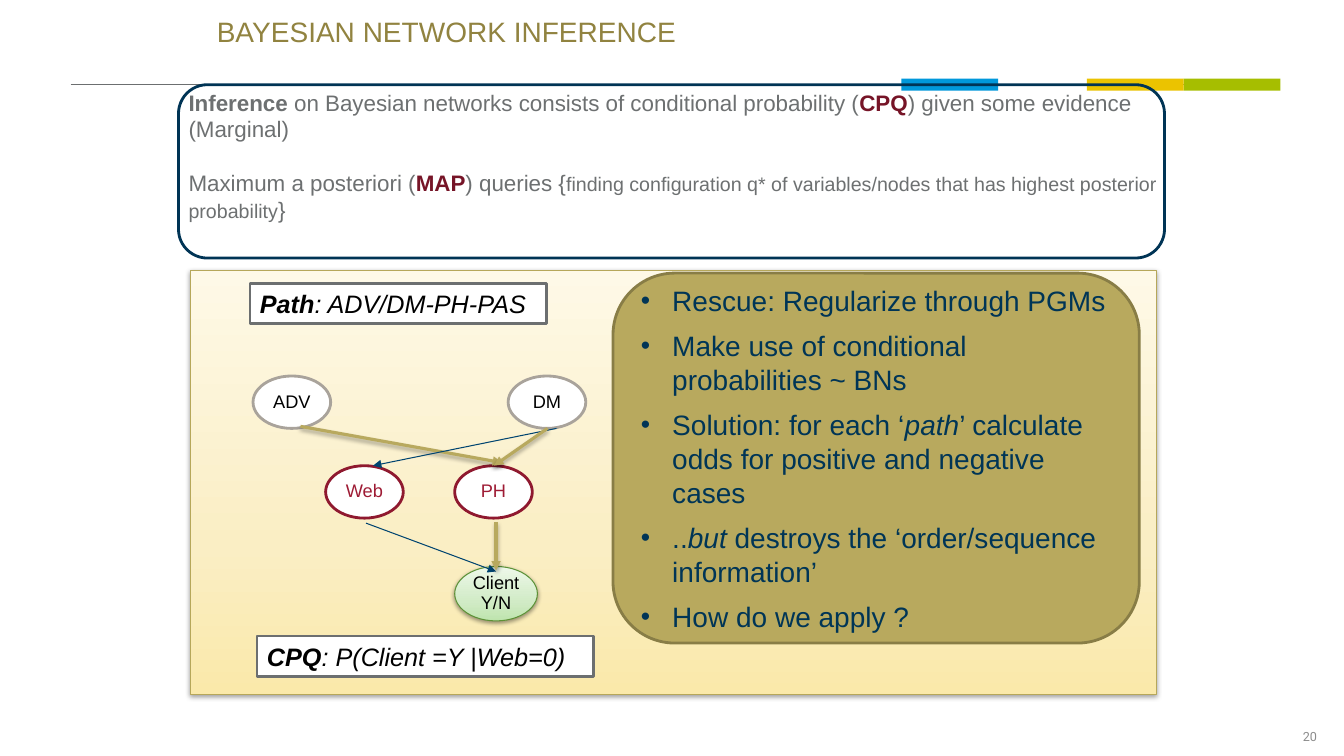
from dataclasses import dataclass

from lxml import etree
from pptx import Presentation
from pptx.dml.color import RGBColor
from pptx.enum.shapes import MSO_CONNECTOR as Connector, MSO_SHAPE as Shape
from pptx.enum.text import MSO_ANCHOR as Anchor, PP_ALIGN as Align
from pptx.oxml import parse_xml
from pptx.oxml.ns import nsdecls, qn
from pptx.util import Inches, Pt


@dataclass(frozen=True)
class Theme:
    font: str = "Arial"
    number_font: str = "Roboto"
    black: str = "000000"
    white: str = "FFFFFF"
    grey: str = "6C6F70"
    body: str = "6D7071"
    number: str = "8C8C8C"
    title: str = "918340"
    accent: str = "761427"
    navy: str = "003455"
    bullet_text: str = "003556"
    thin_arrow: str = "004470"
    gold: str = "B8A95E"
    gold_edge: str = "887D46"
    panel_edge: str = "B6A75A"
    cause_edge: str = "A9A39B"
    event_edge: str = "8F192F"
    event_text: str = "9E1B34"
    client_edge: str = "5D9136"
    panel_gradient: tuple = ((0, "FAE9AA"), (35, "FAEEC4"), (100, "FEF9E7"))
    client_gradient: tuple = ((0, "BEE4AD"), (35, "D1EBC6"), (100, "EDF8E9"))
    number_size: int = 9
    node_size: int = 13
    detail_size: int = 14
    body_size: int = 16
    label_size: int = 18
    large_size: int = 20


THEME = Theme()


def rgb(color):
    return RGBColor.from_string(color)


def add_runs(paragraph, runs, size, color):
    """Each run is its text and a dict of what differs from the paragraph."""
    for text, style in runs:
        run = paragraph.add_run()
        run.text = text
        font = run.font
        font.name = style.get("font", THEME.font)
        font.size = Pt(style.get("size", size))
        font.color.rgb = rgb(style.get("color", color))
        font.bold = style.get("bold", False)
        font.italic = style.get("italic", False)


def set_frame(shape, anchor=Anchor.TOP, inset=None):
    frame = shape.text_frame
    frame.word_wrap = True
    frame.vertical_anchor = anchor
    if inset is not None:
        frame.margin_left = frame.margin_right = Inches(inset)
        frame.margin_top = frame.margin_bottom = Inches(inset)
    return frame


def add_text(slide, box, paragraphs, size, color, inset=None, anchor=Anchor.TOP,
             align=Align.LEFT, before=0):
    shape = slide.shapes.add_textbox(*map(Inches, box))
    frame = set_frame(shape, anchor, inset)
    for index, runs in enumerate(paragraphs):
        paragraph = frame.add_paragraph() if index else frame.paragraphs[0]
        paragraph.alignment = align
        paragraph.space_before = Pt(before if index else 0)
        add_runs(paragraph, runs, size, color)


def add_shadow(shape, alpha, distance):
    effects = shape._element.spPr.find(qn("a:effectLst"))
    effects.append(parse_xml(
        f'<a:outerShdw {nsdecls("a")} blurRad="{Pt(3.1)}" dist="{Pt(distance)}" '
        f'dir="5400000" rotWithShape="0"><a:srgbClr val="{THEME.black}">'
        f'<a:alpha val="{alpha * 1000}"/></a:srgbClr></a:outerShdw>'))


def set_gradient(shape, stops):
    shape.fill.background()
    properties = shape._element.spPr
    stop_xml = "".join(f'<a:gs pos="{position * 1000}"><a:srgbClr val="{color}"/></a:gs>'
                       for position, color in stops)
    properties.replace(properties.find(qn("a:noFill")), parse_xml(
        f'<a:gradFill {nsdecls("a")} rotWithShape="1"><a:gsLst>{stop_xml}</a:gsLst>'
        '<a:lin ang="16200000" scaled="0"/></a:gradFill>'))


def add_block(slide, kind, box, fill=None, edge=None, width=2.0):
    """A preset shape; a tuple of stops as fill gives a shadowed gradient."""
    shape = slide.shapes.add_shape(kind, *map(Inches, box))
    shape.shadow.inherit = False
    if isinstance(fill, tuple):
        set_gradient(shape, fill)
        add_shadow(shape, 38, 1.6)
    elif fill:
        shape.fill.solid()
        shape.fill.fore_color.rgb = rgb(fill)
    else:
        shape.fill.background()
    if edge:
        shape.line.color.rgb = rgb(edge)
        shape.line.width = Pt(width)
    else:
        shape.line.fill.background()
    return shape


def add_node(slide, text, box, edge, color, fill=THEME.white, width=2.0):
    frame = set_frame(add_block(slide, Shape.OVAL, box, fill, edge, width),
                      Anchor.MIDDLE, 0)
    paragraph = frame.paragraphs[0]
    paragraph.alignment = Align.CENTER
    paragraph.line_spacing = 0.9
    add_runs(paragraph, [(text, {})], THEME.node_size, color)


def add_label(slide, box, heading, formula):
    frame = set_frame(add_block(slide, Shape.RECTANGLE, box, THEME.white, THEME.grey))
    paragraph = frame.paragraphs[0]
    paragraph.alignment = Align.LEFT
    add_runs(paragraph, [(heading, {"bold": True, "italic": True}),
                         (formula, {"italic": True})], THEME.label_size, THEME.black)


def add_line(slide, start, end, color, width, arrow=True, shadow=False):
    line = slide.shapes.add_connector(Connector.STRAIGHT, *map(Inches, start + end))
    line.line.color.rgb = rgb(color)
    line.line.width = Pt(width)
    if arrow:
        etree.SubElement(line.line._get_or_add_ln(), qn("a:tailEnd"), type="triangle")
    etree.SubElement(line._element.spPr, qn("a:effectLst"))
    if shadow:
        add_shadow(line, 35, 1.8)


def add_bullets(shape, items):
    frame = set_frame(shape, Anchor.MIDDLE)
    for index, runs in enumerate(items):
        paragraph = frame.add_paragraph() if index else frame.paragraphs[0]
        paragraph.alignment = Align.LEFT
        paragraph.line_spacing = 1.01
        paragraph.space_before, paragraph.space_after = Pt(7.1), Pt(0.9)
        properties = paragraph._p.get_or_add_pPr()
        properties.set("marL", str(Inches(0.31)))
        properties.set("indent", str(Inches(-0.31)))
        etree.SubElement(properties, qn("a:buSzPct"), val="95000")
        etree.SubElement(properties, qn("a:buFont"), typeface=THEME.font)
        etree.SubElement(properties, qn("a:buChar"), char="•")
        add_runs(paragraph, runs, THEME.large_size, THEME.bullet_text)


def main():
    presentation = Presentation()
    presentation.slide_width, presentation.slide_height = Inches(13.33), Inches(7.5)
    slide = presentation.slides.add_slide(presentation.slide_layouts[6])

    # Page number and header rule
    add_text(slide, (10.16, 7.16, 3, 0.3), [[("20", {"font": THEME.number_font})]],
             THEME.number_size, THEME.number, anchor=Anchor.MIDDLE, align=Align.RIGHT)
    add_line(slide, (0.7, 0.84), (12.67, 0.84), THEME.grey, 1, arrow=False)
    for left, color in ((11.74, "A6BE00"), (10.78, "EBC300"), (8.94, "0098DB")):
        add_block(slide, Shape.RECTANGLE, (left, 0.78, 0.96, 0.12), color)

    # Diagram background, title and introduction
    add_block(slide, Shape.RECTANGLE, (1.89, 2.68, 9.58, 4.21),
              THEME.panel_gradient, THEME.panel_edge, 0.75)
    key = {"color": THEME.accent, "bold": True}
    add_text(slide, (1.87, 0.88, 9.68, 1.6), [
        [("Inference", {"bold": True}),
         (" on Bayesian networks consists of conditional probability (", {}),
         ("CPQ", key), (") given some evidence (Marginal)", {})],
        [("Maximum a posteriori (", {}), ("MAP", key), (") queries {", {}),
         ("finding configuration q* of variables/nodes that has highest posterior "
          "probability", {"size": THEME.detail_size}), ("}", {})],
    ], THEME.body_size, THEME.body, inset=0, before=19.4)
    add_text(slide, (2.15, 0.14, 9.05, 0.7), [[("BAYESIAN NETWORK INFERENCE", {})]],
             THEME.large_size, THEME.title, inset=0)

    # Network nodes
    for text, left, top, edge, color in (
            ("ADV", 2.51, 3.73, THEME.cause_edge, THEME.black),
            ("DM", 5.04, 3.73, THEME.cause_edge, THEME.black),
            ("PH", 4.51, 4.62, THEME.event_edge, THEME.event_text),
            ("Web", 3.23, 4.62, THEME.event_edge, THEME.event_text)):
        add_node(slide, text, (left, top, 0.77, 0.52), edge, color)
    add_node(slide, "Client Y/N", (4.51, 5.62, 0.82, 0.54), THEME.client_edge,
             THEME.black, THEME.client_gradient, 0.75)

    # Network arrows: thick for the chosen path, thin for the others
    for start, end, on_path in (((2.98, 4.23), (4.98, 4.59), True),
                                ((3.63, 5.19), (4.92, 5.67), False),
                                ((5.52, 4.25), (3.7, 4.62), False),
                                ((5.43, 4.25), (4.9, 4.62), True),
                                ((4.92, 5.18), (4.92, 5.66), True)):
        add_line(slide, start, end, THEME.gold if on_path else THEME.thin_arrow,
                 2.25 if on_path else 0.75, shadow=on_path)

    # Formula labels
    add_label(slide, (2.48, 2.81, 2.94, 0.4), "Path", ": ADV/DM-PH-PAS")
    add_label(slide, (2.55, 6.31, 3.34, 0.4), "CPQ", ": P(Client =Y |Web=0)")

    # Introduction frame and bullet panel
    rounded = Shape.FLOWCHART_ALTERNATE_PROCESS
    add_block(slide, rounded, (1.77, 0.84, 9.78, 1.72), edge=THEME.navy)
    panel = add_block(slide, rounded, (6.08, 2.71, 5.22, 3.67), THEME.gold, THEME.gold_edge)
    italic = {"italic": True}
    add_bullets(panel, [
        [("Rescue: Regularize through PGMs", {})],
        [("Make use of conditional probabilities ~ BNs", {})],
        [("Solution: for each ‘", {}), ("path", italic),
         ("’ calculate odds for positive and negative cases", {})],
        [("..", {}), ("but", italic), (" destroys the ‘order/sequence information’", {})],
        [("How do we apply ?", {})],
    ])
    presentation.save("out.pptx")


if __name__ == "__main__":
    main()
